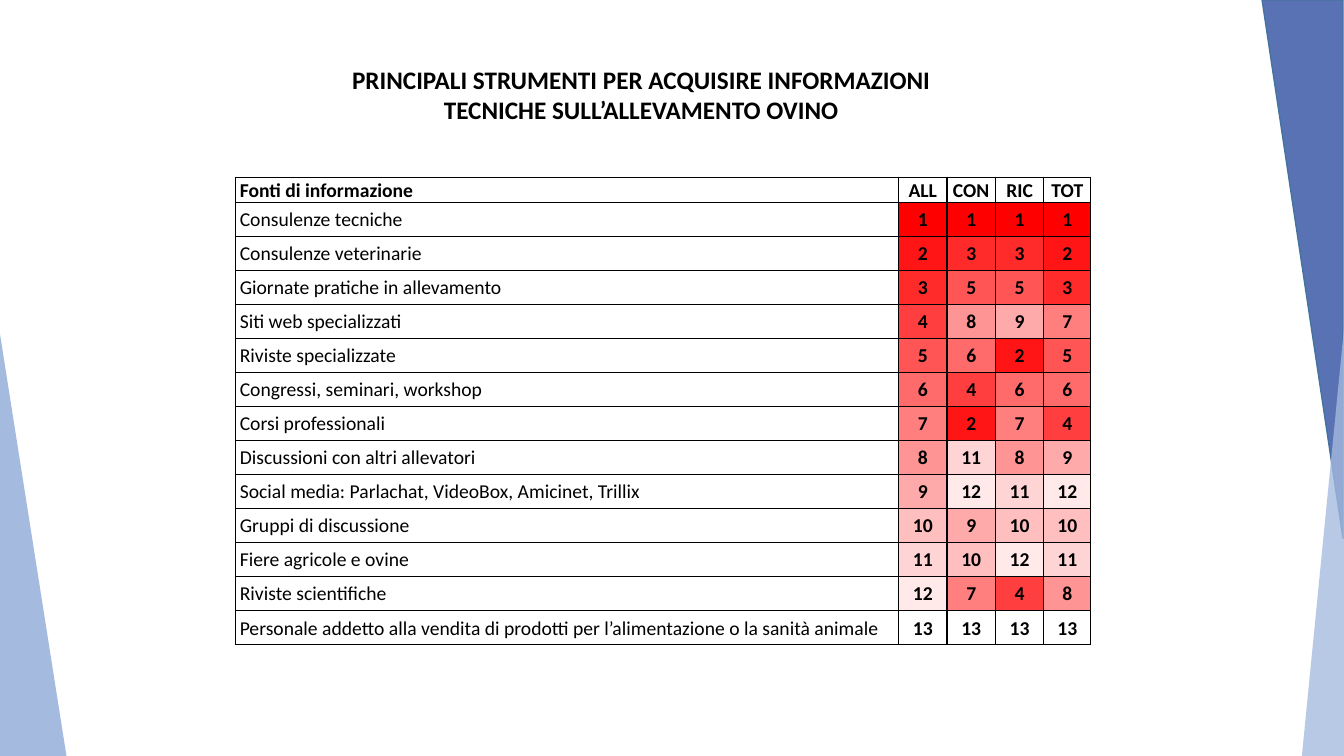
from lxml.etree import SubElement
from pptx import Presentation
from pptx.dml.color import RGBColor
from pptx.enum.shapes import MSO_SHAPE
from pptx.enum.text import MSO_ANCHOR, PP_ALIGN
from pptx.oxml import parse_xml
from pptx.oxml.ns import nsdecls, qn
from pptx.util import Pt

# Content
TITLE = "PRINCIPALI STRUMENTI PER ACQUISIRE INFORMAZIONI TECNICHE SULL’ALLEVAMENTO OVINO"
HEADINGS = ("Fonti di informazione", "ALL", "CON", "RIC", "TOT")
SOURCES = [
    ("Consulenze tecniche", 1, 1, 1, 1),
    ("Consulenze veterinarie", 2, 3, 3, 2),
    ("Giornate pratiche in allevamento", 3, 5, 5, 3),
    ("Siti web specializzati", 4, 8, 9, 7),
    ("Riviste specializzate", 5, 6, 2, 5),
    ("Congressi, seminari, workshop", 6, 4, 6, 6),
    ("Corsi professionali", 7, 2, 7, 4),
    ("Discussioni con altri allevatori", 8, 11, 8, 9),
    ("Social media: Parlachat, VideoBox, Amicinet, Trillix", 9, 12, 11, 12),
    ("Gruppi di discussione", 10, 9, 10, 10),
    ("Fiere agricole e ovine", 11, 10, 12, 11),
    ("Riviste scientifiche", 12, 7, 4, 8),
    ("Personale addetto alla vendita di prodotti per l’alimentazione o la sanità animale",
     13, 13, 13, 13),
]

# Format
FONT = "Calibri"
BLACK = RGBColor(0x00, 0x00, 0x00)
LIGHT_BLUE = RGBColor(0xA5, 0xBA, 0xDF)
DARK_BLUE = RGBColor(0x59, 0x72, 0xB4)
EDGE_BLUE = RGBColor(0x43, 0x73, 0x9E)
SLIDE_WIDTH, SLIDE_HEIGHT = 960, 540
TABLE_LEFT, TABLE_TOP = 168.3, 126.5
COLUMN_WIDTHS = (473.6, 34.6, 34.6, 34.6, 33.6)
HEADING_HEIGHT, ROW_HEIGHT = 13.7, 24.3
CELL_INSET = 3


def write(frame, text, size=14, bold=False, align=PP_ALIGN.LEFT, spacing=None):
    frame.word_wrap = True
    paragraph = frame.paragraphs[0]
    paragraph.alignment = align
    paragraph.line_spacing = spacing
    run = paragraph.add_run()
    run.text = text
    run.font.name = FONT
    run.font.size = Pt(size)
    run.font.bold = bold
    run.font.color.rgb = BLACK


def add_wedge(left, top, width, height, color):
    wedge = slide.shapes.add_shape(
        MSO_SHAPE.ISOSCELES_TRIANGLE, Pt(left), Pt(top), Pt(width), Pt(height))
    wedge.adjustments[0] = 0
    wedge.shadow.inherit = False
    wedge.fill.solid()
    wedge.fill.fore_color.rgb = color
    wedge.line.fill.background()
    return wedge


def rank_color(rank):
    """Fade from red for the first rank to white for the last."""
    tint = 255 * (rank - 1) // (len(SOURCES) - 1)
    return RGBColor(255, tint, tint)


def add_borders(cell):
    properties = cell._tc.get_or_add_tcPr()
    for position, side in enumerate(("lnL", "lnR", "lnT", "lnB")):
        properties.insert(position, parse_xml(
            f'<a:{side} {nsdecls("a")} w="{Pt(1)}"><a:solidFill>'
            f'<a:srgbClr val="{BLACK}"/></a:solidFill></a:{side}>'))


presentation = Presentation()
presentation.slide_width, presentation.slide_height = Pt(SLIDE_WIDTH), Pt(SLIDE_HEIGHT)
slide = presentation.slides.add_slide(presentation.slide_layouts[6])

# Side wedges
add_wedge(-0.5, 235.5, 48, 304.5, LIGHT_BLUE)

upper_right = add_wedge(901.5, 0, 57.8, 384.5, DARK_BLUE)
upper_right.rotation = 180
upper_right.line.color.rgb = EDGE_BLUE
upper_right.line.width = Pt(1)

lower_right = add_wedge(930, 235.5, 30, 304.5, LIGHT_BLUE)
lower_right._element.spPr.xfrm.set("flipH", "1")
lower_right_color = lower_right._element.spPr.find(f"{qn('a:solidFill')}/{qn('a:srgbClr')}")
SubElement(lower_right_color, qn("a:alpha")).set("val", "78000")

# Title
title = slide.shapes.add_textbox(Pt(218), Pt(42.5), Pt(480), Pt(51))
write(title.text_frame, TITLE, size=18, bold=True, align=PP_ALIGN.CENTER)

# Ranking table
rows = [HEADINGS, *SOURCES]
ranking = slide.shapes.add_table(
    len(rows), len(HEADINGS), Pt(TABLE_LEFT), Pt(TABLE_TOP), Pt(sum(COLUMN_WIDTHS)),
    Pt(HEADING_HEIGHT + ROW_HEIGHT * len(SOURCES))).table
ranking.first_row = ranking.horz_banding = False
for column, width in zip(ranking.columns, COLUMN_WIDTHS):
    column.width = Pt(width)

for row_index, row in enumerate(rows):
    is_heading = row_index == 0
    ranking.rows[row_index].height = Pt(HEADING_HEIGHT if is_heading else ROW_HEIGHT)
    for column_index, value in enumerate(row):
        is_name = column_index == 0
        cell = ranking.cell(row_index, column_index)
        cell.margin_left = cell.margin_right = Pt(CELL_INSET)
        cell.margin_top = cell.margin_bottom = 0
        cell.vertical_anchor = (
            MSO_ANCHOR.BOTTOM if is_heading and is_name else MSO_ANCHOR.MIDDLE)
        if is_heading or is_name:
            cell.fill.background()
        else:
            cell.fill.solid()
            cell.fill.fore_color.rgb = rank_color(value)
        add_borders(cell)
        write(cell.text_frame, str(value), bold=is_heading or not is_name,
              align=PP_ALIGN.LEFT if is_name else PP_ALIGN.CENTER, spacing=1.07)

presentation.save("out.pptx")
